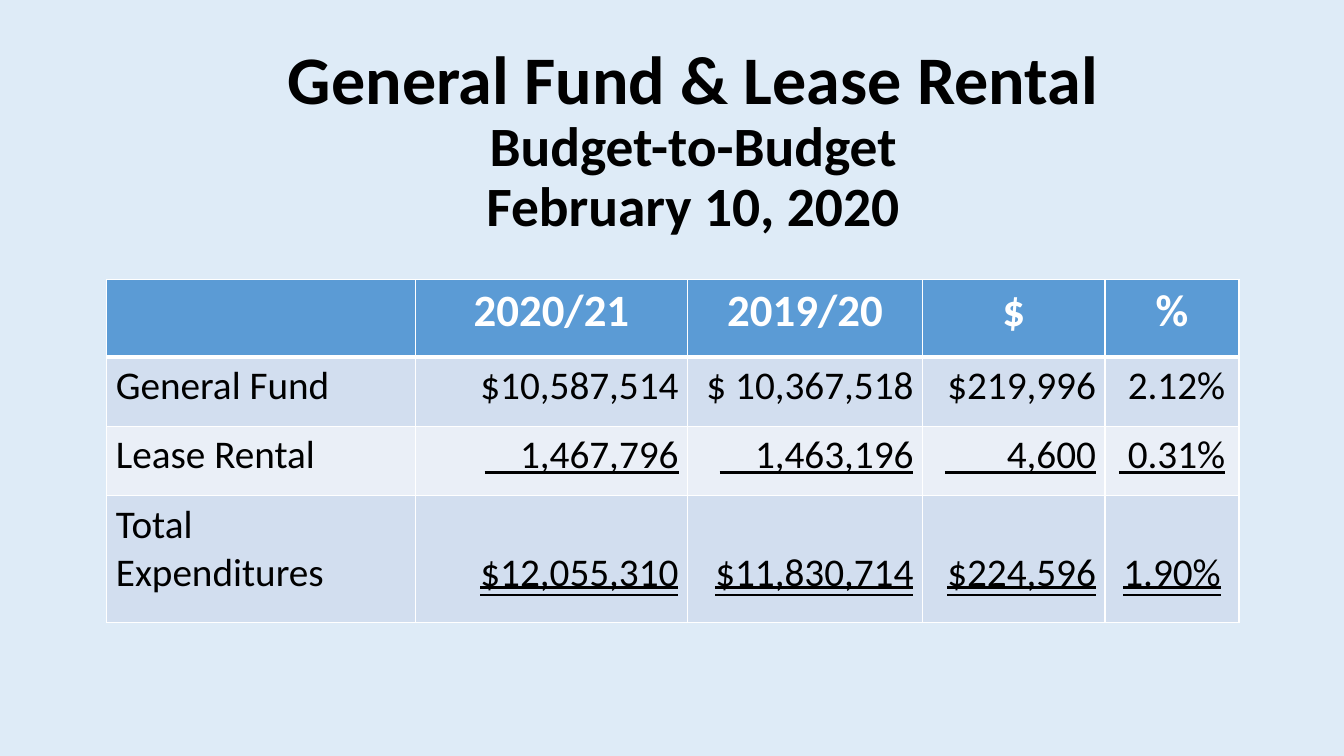
from lxml.etree import SubElement
from pptx import Presentation
from pptx.dml.color import RGBColor
from pptx.enum.text import MSO_ANCHOR as Anchor, MSO_UNDERLINE as Underline, PP_ALIGN as Align
from pptx.oxml.ns import qn
from pptx.util import Inches, Pt


def paint(target, colour):
    target.solid()
    target.fore_color.rgb = RGBColor.from_string(colour)


def style(run, colour, **values):
    run.font.name = "Calibri"
    paint(run.font.fill, colour)
    for key, value in values.items():
        setattr(run.font, key, value)


deck = Presentation()
deck.slide_width, deck.slide_height = Inches(13.33), Inches(7.5)
slide = deck.slides.add_slide(deck.slide_layouts[6])
paint(slide.background.fill, "DEEBF7")

left = Inches(1.06)
heading = slide.shapes.add_textbox(left, Inches(0.45), Inches(11.63), Inches(1.92)).text_frame
heading.word_wrap = True
heading.vertical_anchor = Anchor.MIDDLE
title = heading.paragraphs[0]
title.alignment, title.line_spacing = Align.CENTER, 0.9
title_lines = [("General Fund & Lease Rental", 48.6), ("Budget-to-Budget", 39.6), ("February 10, 2020", 39.6)]
for number, (words, size) in enumerate(title_lines):
    if number:
        title.add_line_break()
    line = title.add_run()
    line.text = words
    style(line, "000000", size=Pt(size), bold=True)

budget_rows = [
    ("", "2020/21", "2019/20", "$", "%"),
    ("General Fund", "$10,587,514", "$ 10,367,518", "$219,996", " 2.12%"),
    ("Lease Rental", "    1,467,796", "    1,463,196", "       4,600", " 0.31%"),
    ("Total Expenditures", "$12,055,310", "$11,830,714", "$224,596", "1.90%"),
]
column_widths = [3.06, 2.7, 2.33, 1.81, 1.33]
row_heights = [0.77, 0.69, 0.69, 1.26]
row_fills = ["5B9BD5", "D2DEEF", "EAEFF7", "D2DEEF"]
row_underlines = [False, False, True, Underline.DOUBLE_LINE]
column_aligns = [Align.LEFT, Align.RIGHT, Align.RIGHT, Align.RIGHT, Align.CENTER]

budget = slide.shapes.add_table(
    len(row_heights), len(column_widths), left, Inches(2.77),
    Inches(sum(column_widths)), Inches(sum(row_heights))).table
for column, width in zip(budget.columns, column_widths):
    column.width = Inches(width)
for row, height in zip(budget.rows, row_heights):
    row.height = Inches(height)

for r, amounts in enumerate(budget_rows):
    is_header, is_total = r == 0, r == len(budget_rows) - 1
    for c, amount in enumerate(amounts):
        cell = budget.cell(r, c)
        properties = cell._tc.get_or_add_tcPr()
        for side in "LRTB":
            thick = (side == "B" and is_header) or (side == "T" and r == 1)
            border = SubElement(properties, qn(f"a:ln{side}"), w=str(Pt(3 if thick else 1)))
            SubElement(SubElement(border, qn("a:solidFill")), qn("a:srgbClr"), val="FFFFFF")
        paint(cell.fill, row_fills[r])
        cell.margin_left = cell.margin_right = Inches(0.09)
        cell.margin_top = cell.margin_bottom = Inches(0.05)
        if is_total and c:
            cell.vertical_anchor = Anchor.BOTTOM
            cell.margin_bottom = Inches(0.26)
        if not amount:
            continue
        entry = cell.text_frame.paragraphs[0]
        entry.alignment = Align.CENTER if is_header else column_aligns[c]
        figure = entry.add_run()
        figure.text = amount
        style(figure, "FFFFFF" if is_header else "000000", size=Pt(32 if is_header else 28),
              bold=is_header, underline=row_underlines[r] if c else False)

deck.save("out.pptx")
